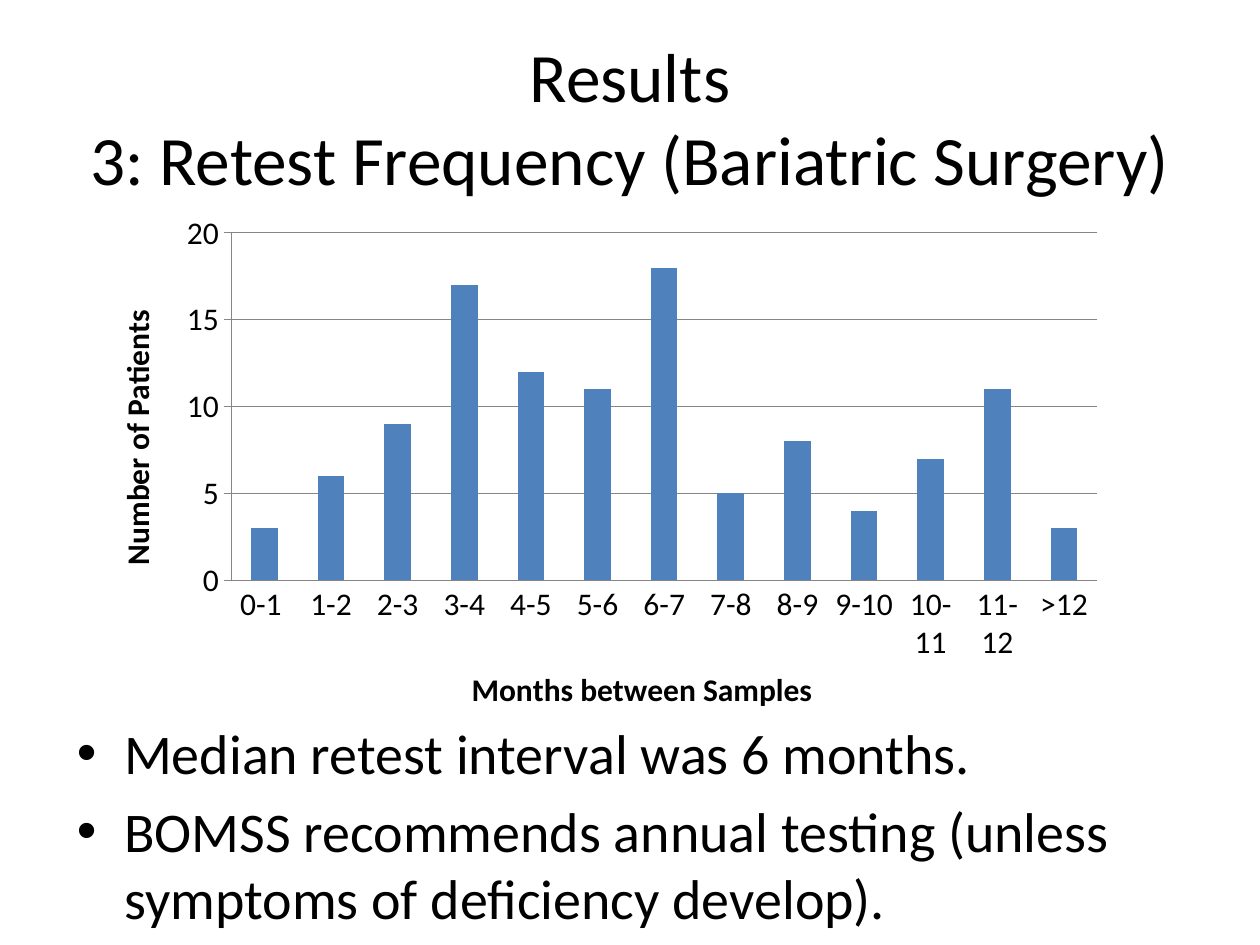
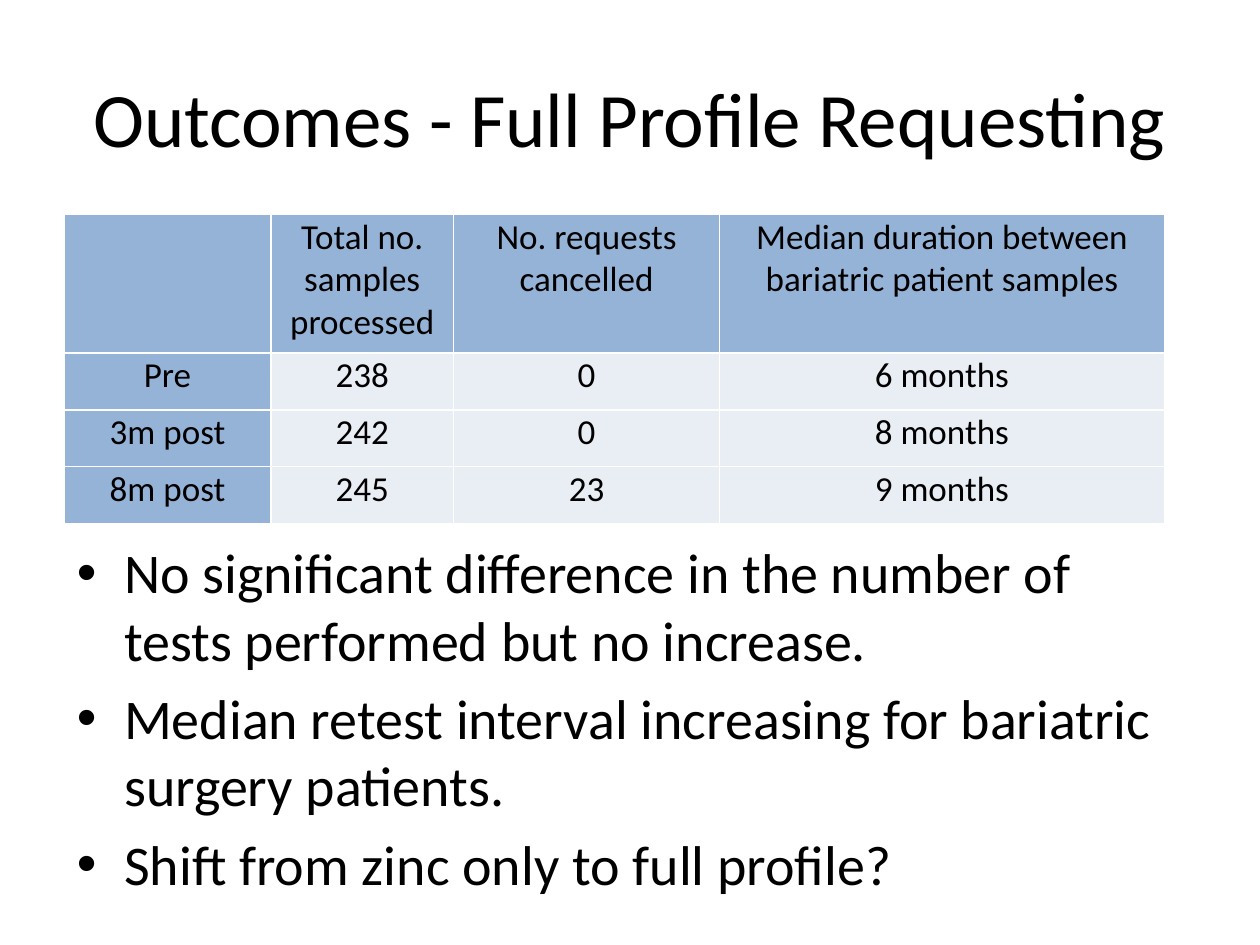
from lxml import etree
from pptx import Presentation
from pptx.chart.data import CategoryChartData
from pptx.dml.color import RGBColor
from pptx.enum.chart import XL_CHART_TYPE, XL_TICK_MARK
from pptx.enum.text import MSO_ANCHOR, MSO_AUTO_SIZE, PP_ALIGN
from pptx.oxml import parse_xml
from pptx.oxml.ns import nsdecls, qn
from pptx.util import Pt

COLUMN = XL_CHART_TYPE.COLUMN_CLUSTERED
TICK_NONE, TICK_OUT = XL_TICK_MARK.NONE, XL_TICK_MARK.OUTSIDE
CENTER = PP_ALIGN.CENTER
MIDDLE, TOP = MSO_ANCHOR.MIDDLE, MSO_ANCHOR.TOP
NO_FIT = MSO_AUTO_SIZE.NONE

FONT = "Calibri"
BLACK, WHITE, GREY = "000000", "FFFFFF", "868686"
BAR, HEAD, CELL = "4F81BD", "95B3D7", "E9EDF4"
LEFT, WIDTH = 36.7, 648


def rgb(value):
    return RGBColor.from_string(value)


def style_font(font, size, bold=False):
    font.name, font.size, font.bold = FONT, Pt(size), bold
    font.color.rgb = rgb(BLACK)


def add_run(p, text, size, bold=False):
    r = p.add_run()
    r.text = text
    style_font(r.font, size, bold)


def place(sp, x, y, w, h):
    sp.left, sp.top, sp.width, sp.height = Pt(x), Pt(y), Pt(w), Pt(h)


def add_title(s, lines, size):
    sp = s.shapes.title
    place(sp, 36, 21.6, WIDTH, 90)
    tf = sp.text_frame
    tf.auto_size, tf.vertical_anchor = NO_FIT, MIDDLE
    p = tf.paragraphs[0]
    p.alignment = CENTER
    for i, line in enumerate(lines):
        if i:
            p.add_line_break()
        add_run(p, line, size)


def add_bullets(s, items, y, h):
    sp = s.placeholders[1]
    place(sp, LEFT, y, WIDTH, h)
    tf = sp.text_frame
    tf.auto_size, tf.vertical_anchor = NO_FIT, TOP
    for i, item in enumerate(items):
        p = tf.add_paragraph() if i else tf.paragraphs[0]
        add_run(p, item, 32)


def style_axis(axis, title, tick):
    axis.major_tick_mark, axis.minor_tick_mark = tick, TICK_NONE
    axis.format.line.color.rgb = rgb(GREY)
    style_font(axis.tick_labels.font, 18)
    add_run(axis.axis_title.text_frame.paragraphs[0], title, 18, True)


def set_plot_area(chart, x, y, w, h):
    plot_area = chart.plots[0]._element.getparent()
    for old in plot_area.findall(qn("c:layout")):
        plot_area.remove(old)
    layout = parse_xml(f"<c:layout {nsdecls('c')}/>")
    manual = etree.SubElement(layout, qn("c:manualLayout"))
    settings = dict(layoutTarget="inner", xMode="edge", yMode="edge", x=x, y=y, w=w, h=h)
    for tag, val in settings.items():
        etree.SubElement(manual, qn(f"c:{tag}")).set("val", str(val))
    plot_area.insert(0, layout)


def add_column_chart(s, cats, vals, cat_title, val_title):
    data = CategoryChartData()
    data.categories = cats
    data.add_series("Series 1", vals)
    chart = s.shapes.add_chart(COLUMN, Pt(59.8), Pt(116.6), Pt(578.2), Pt(294.5), data).chart
    chart.has_legend = chart.has_title = False
    style_font(chart.font, 18)
    plot = chart.plots[0]
    plot.gap_width, plot.vary_by_categories = 150, False
    fill = plot.series[0].format.fill
    fill.solid()
    fill.fore_color.rgb = rgb(BAR)
    style_axis(chart.category_axis, cat_title, TICK_NONE)
    axis = chart.value_axis
    style_axis(axis, val_title, TICK_OUT)
    axis.minimum_scale, axis.maximum_scale, axis.major_unit = 0, 20, 5
    axis.major_gridlines.format.line.color.rgb = rgb(GREY)
    # Fractions of the chart frame
    set_plot_area(chart, 0.125, 0.056, 0.856, 0.674)


def set_borders(cell):
    tc_pr = cell._tc.get_or_add_tcPr()
    for side in ("lnL", "lnR", "lnT", "lnB"):
        ln = etree.SubElement(tc_pr, qn(f"a:{side}"), w=str(Pt(1)))
        solid = etree.SubElement(ln, qn("a:solidFill"))
        etree.SubElement(solid, qn("a:srgbClr"), val=WHITE)


def fill_cell(cell, text, color):
    set_borders(cell)
    cell.fill.solid()
    cell.fill.fore_color.rgb = rgb(color)
    cell.margin_left = cell.margin_right = cell.margin_top = Pt(0.7)
    cell.margin_bottom = 0
    p = cell.text_frame.paragraphs[0]
    p.alignment = CENTER
    if text:
        add_run(p, text, 20)


def add_table(s, rows, widths, heights):
    frame = s.shapes.add_table(len(rows), len(widths), Pt(LEFT), Pt(122.6),
                               Pt(sum(widths)), Pt(sum(heights)))
    table = frame.table
    table.first_row = table.horz_banding = False
    for col, w in zip(table.columns, widths):
        col.width = Pt(w)
    for i, (row, h) in enumerate(zip(rows, heights)):
        table.rows[i].height = Pt(h)
        for j, text in enumerate(row):
            fill_cell(table.cell(i, j), text, CELL if i and j else HEAD)


def main():
    prs = Presentation()
    prs.slide_width, prs.slide_height = Pt(720), Pt(540)
    layout = prs.slide_layouts[1]

    # Retest frequency chart
    s = prs.slides.add_slide(layout)
    add_title(s, ["Results", "3: Retest Frequency (Bariatric Surgery)"], 39.6)
    add_bullets(s, [
        "Median retest interval was 6 months.",
        "BOMSS recommends annual testing (unless symptoms of deficiency develop).",
    ], 406.8, 133.2)
    cats = ["0-1 "] + [f"{m}-{m + 1}" for m in range(1, 12)] + [">12"]
    add_column_chart(s, cats, [3, 6, 9, 17, 12, 11, 18, 5, 8, 4, 7, 11, 3],
                     "Months between Samples", "Number of Patients")

    # Full profile outcomes table
    s = prs.slides.add_slide(layout)
    add_title(s, ["Outcomes - Full Profile Requesting"], 44)
    add_bullets(s, [
        "No significant difference in the number of tests performed but no increase.",
        "Median retest interval increasing for bariatric surgery patients.",
        "Shift from zinc only to full profile?",
    ], 303.8, 209.5)
    add_table(s, [
        ["", "Total no. samples processed", "No. requests cancelled",
         "Median duration between bariatric patient samples"],
        ["Pre", "238", "0", "6 months"],
        ["3m post", "242", "0", "8 months"],
        ["8m post", "245", "23", "9 months"],
    ], [118.1, 104.4, 152, 254.2], [79.2, 32.4, 32.4, 32.4])

    prs.save("out.pptx")


if __name__ == "__main__":
    main()
